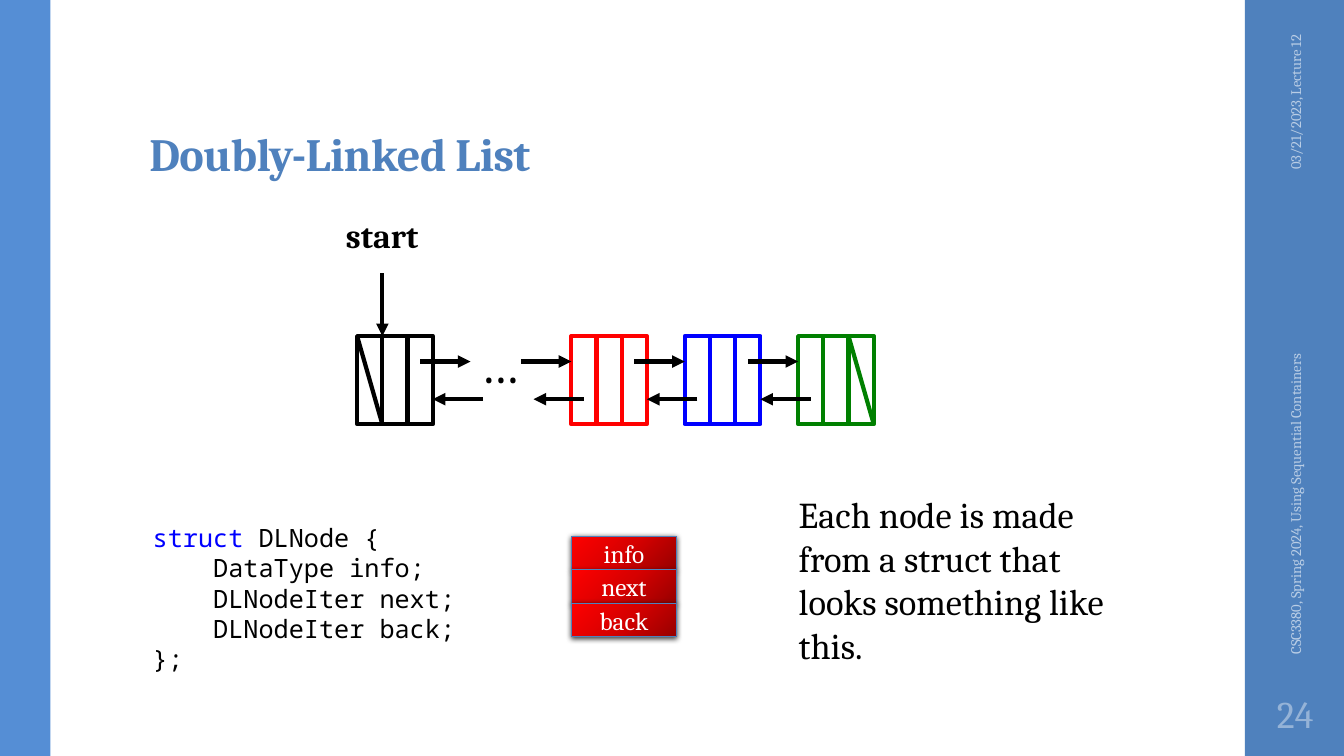
import pptx
import pptx.dml.color
import pptx.enum.shapes
import pptx.enum.text
import pptx.oxml
import pptx.oxml.ns
import pptx.util
from pptx.util import Cm

SERIF = "Cambria"
MONO = "Noto Sans Mono"
BLACK, WHITE, BLUE = "000000", "FFFFFF", "4F81BD"
ALIGN = pptx.enum.text.PP_ALIGN
ANCHOR = pptx.enum.text.MSO_ANCHOR
NAMESPACE = 'xmlns:a="http://schemas.openxmlformats.org/drawingml/2006/main"'

RED_GRADIENT = f"""<a:gradFill {NAMESPACE} rotWithShape="1"><a:gsLst>
<a:gs pos="0"><a:srgbClr val="970000"/></a:gs>
<a:gs pos="50000"><a:srgbClr val="D70000"/></a:gs>
<a:gs pos="100000"><a:srgbClr val="FF0000"/></a:gs></a:gsLst>
<a:path path="circle"><a:fillToRect l="100000" t="100000"/></a:path></a:gradFill>"""
SOFT_SHADOW = f"""<a:outerShdw {NAMESPACE} blurRad="50800" dist="15240" dir="5400000"
rotWithShape="0"><a:srgbClr val="000000"><a:alpha val="75000"/></a:srgbClr></a:outerShdw>"""


def color(hex_string):
    return pptx.dml.color.RGBColor.from_string(hex_string)


def write_text(shape, text, size=18, font=SERIF, fill=BLACK, bold=False,
               align=ALIGN.LEFT, anchor=ANCHOR.TOP, keyword="", keyword_fill=BLACK):
    """Fill a shape with lines of text; a leading keyword gets its own colour."""
    frame = shape.text_frame
    frame.word_wrap = True
    frame.auto_size = pptx.enum.text.MSO_AUTO_SIZE.NONE
    frame.vertical_anchor = anchor
    for index, line in enumerate(text.split("\n")):
        paragraph = frame.add_paragraph() if index else frame.paragraphs[0]
        paragraph.alignment = align
        parts = [(line, fill)]
        if keyword and line.startswith(keyword):
            parts = [(keyword, keyword_fill), (line[len(keyword):], fill)]
        for part, part_fill in parts:
            run = paragraph.add_run()
            run.text = part
            run.font.size = pptx.util.Pt(size)
            run.font.name = font
            run.font.bold = bold
            run.font.color.rgb = color(part_fill)


def add_text(slide, box, text, rotation=0, **text_format):
    shape = slide.shapes.add_textbox(*map(Cm, box))
    shape.rotation = rotation
    write_text(shape, text, **text_format)
    return shape


def add_box(slide, box, fill=None, line=None, line_width=3):
    rectangle = pptx.enum.shapes.MSO_SHAPE.RECTANGLE
    shape = slide.shapes.add_shape(rectangle, *map(Cm, box))
    shape.shadow.inherit = False
    if fill:
        shape.fill.solid()
        shape.fill.fore_color.rgb = color(fill)
    else:
        shape.fill.background()
    if line:
        shape.line.color.rgb = color(line)
        shape.line.width = pptx.util.Pt(line_width)
    else:
        shape.line.fill.background()
    return shape


def add_line(slide, start, end, line=BLACK, arrow=False):
    straight = pptx.enum.shapes.MSO_CONNECTOR.STRAIGHT
    connector = slide.shapes.add_connector(straight, *map(Cm, start + end))
    connector.line.color.rgb = color(line)
    connector.line.width = pptx.util.Pt(3)
    properties = connector._element.spPr
    if arrow:
        outline = properties.find(pptx.oxml.ns.qn("a:ln"))
        outline.append(pptx.oxml.parse_xml(f'<a:tailEnd {NAMESPACE} type="triangle"/>'))
    properties.append(pptx.oxml.parse_xml(f"<a:effectLst {NAMESPACE}/>"))


def add_side_bars(slide, box):
    left, top, width, height = box
    bar_width = 2.54
    bar_left = left + width - 2.5
    add_box(slide, (bar_left, top, bar_width, height), fill=BLUE)
    add_box(slide, (left, top, 1.27, height), fill="558ED5")

    # Footer texts read upwards, centred on the right bar
    footers = [("03/21/2023, Lecture 12", 3.27, 5.28, ALIGN.RIGHT),
               ("CSC3380, Spring 2024, Using Sequential Containers", 11.76, 9.96, ALIGN.LEFT)]
    for text, center, length, align in footers:
        footer_box = (bar_left + (bar_width - length) / 2, top + center - 0.51, length, 1.02)
        add_text(slide, footer_box, text, rotation=270, size=10.5, fill="B9CDE5",
                 align=align, anchor=ANCHOR.MIDDLE)

    add_text(slide, (bar_left, top + 17.15, bar_width, 1.65), "24", size=27, fill="95B3D7",
             align=ALIGN.CENTER, anchor=ANCHOR.MIDDLE)


def add_title(slide, box, text):
    title = slide.shapes.title
    title.left, title.top, title.width, title.height = map(Cm, box)
    write_text(title, text, size=33, fill=BLUE, bold=True, anchor=ANCHOR.BOTTOM)
    title.text_frame.margin_top = Cm(0.08)
    paragraph = title.text_frame.paragraphs[0]
    paragraph.line_spacing = 0.9
    paragraph.runs[0].font._element.set("spc", "-40")


def add_linked_list(slide, box):
    """Draw four three-cell nodes; every offset is a number of cells."""
    left, top, width, height = box
    cell = width / 20.5
    bottom = top + height
    next_level, back_level = top + 0.64, top + 1.59
    # First cell of each node, its colour, and the cell crossed out for a null link
    nodes = [(0, BLACK, 0), (8.5, "FF0000", None), (13, "0000FF", None), (17.5, "008000", 2)]

    def at(column):
        return left + column * cell

    for first, line, null_cell in nodes:
        add_box(slide, (at(first), top, 3 * cell, height), fill=WHITE, line=line)
        for column in (first + 1, first + 2):
            add_line(slide, (at(column), top), (at(column), bottom), line)
        if null_cell is not None:
            column = first + null_cell
            add_line(slide, (at(column), top), (at(column + 1), bottom), line)

    # Links: next arrows point right, back arrows point left
    second = nodes[1][0]
    next_starts = [first + 2.5 for first, _, _ in nodes[:-1]] + [second - 2]
    back_tips = [first + 3 for first, _, _ in nodes[:-1]] + [second - 1.5]
    for column in next_starts:
        add_line(slide, (at(column), next_level), (at(column + 2), next_level), arrow=True)
    for column in back_tips:
        add_line(slide, (at(column + 2), back_level), (at(column), back_level), arrow=True)
    add_text(slide, (at(4.5), top - 0.2, 1.6, 1.27), "…", size=36)

    # Start pointer
    add_text(slide, (left - 0.53, top - 3.18, 4.34, 1.9), "start", size=24, bold=True)
    add_line(slide, (at(1), top - 1.59), (at(1), top), arrow=True)


def add_node_fields(slide, box, names):
    left, top, width, height = box
    row = height / len(names)
    for index, name in enumerate(names):
        shape = add_box(slide, (left, top + index * row, width, row), line=BLUE, line_width=0.75)
        properties = shape._element.spPr
        no_fill = properties.find(pptx.oxml.ns.qn("a:noFill"))
        properties.replace(no_fill, pptx.oxml.parse_xml(RED_GRADIENT))
        effects = properties.find(pptx.oxml.ns.qn("a:effectLst"))
        effects.append(pptx.oxml.parse_xml(SOFT_SHADOW))
        write_text(shape, name, fill=WHITE, align=ALIGN.CENTER, anchor=ANCHOR.MIDDLE)


CODE = """struct DLNode {
    DataType info;
    DLNodeIter next;
    DLNodeIter back;
};"""


def main():
    presentation = pptx.Presentation()
    presentation.slide_width, presentation.slide_height = Cm(33.87), Cm(19.05)
    slide = presentation.slides.add_slide(presentation.slide_layouts[5])

    add_side_bars(slide, (0, 0, 33.87, 19.05))
    add_title(slide, (3.51, 0.81, 26.92, 3.89), "Doubly-Linked List")
    add_linked_list(slide, (9, 8.47, 13.02, 2.22))
    add_text(slide, (3.6, 13.04, 10, 4.1), CODE, font=MONO,
             keyword="struct", keyword_fill="0000FF")
    add_text(slide, (19.88, 12.28, 8.69, 4.7),
             "Each node is made from a struct that looks something like this.", size=26)
    add_node_fields(slide, (14.4, 13.51, 2.65, 2.54), ["info", "next", "back"])
    presentation.save("out.pptx")


if __name__ == "__main__":
    main()
